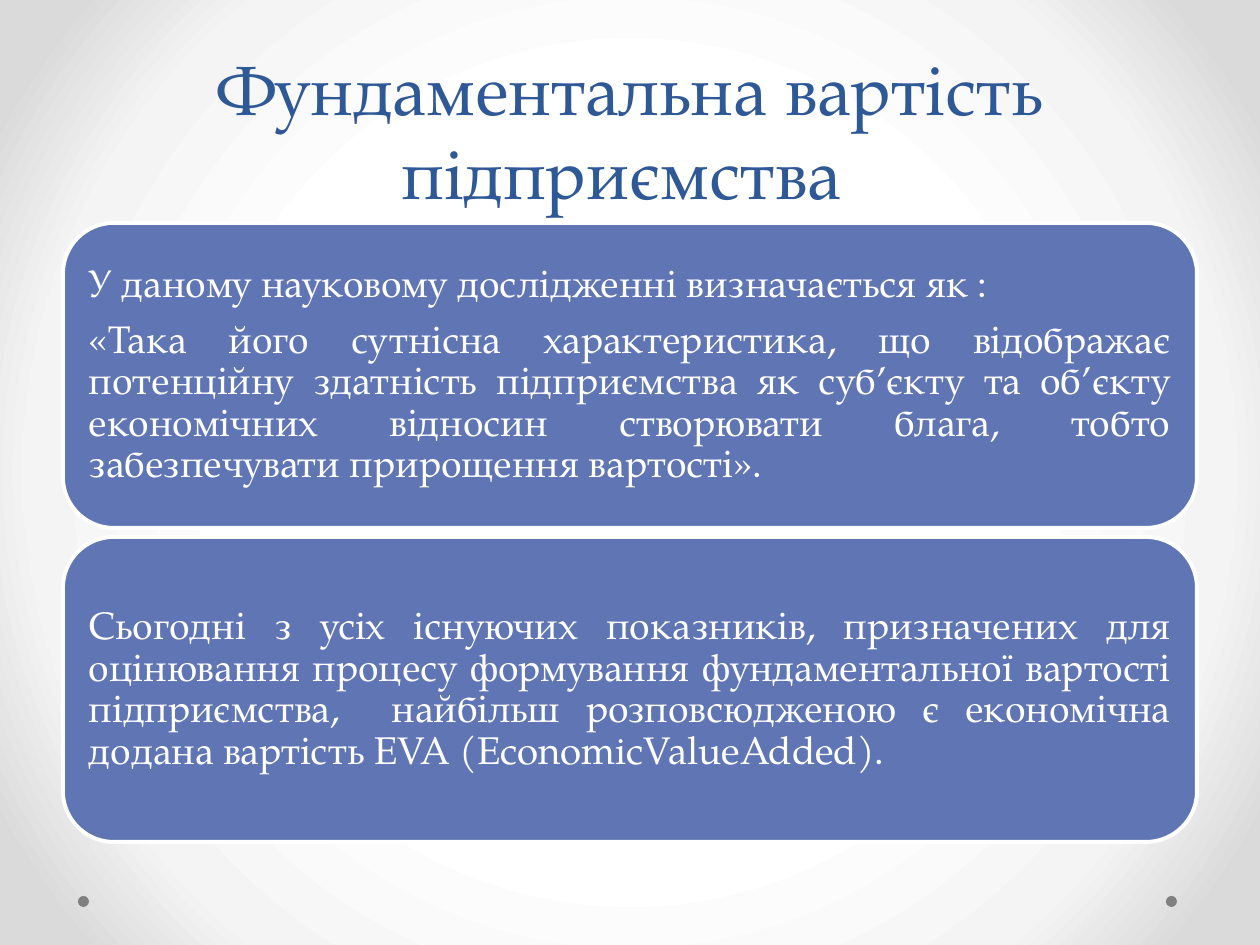
from lxml.etree import SubElement
from pptx import Presentation
from pptx.dml.color import RGBColor
from pptx.enum.shapes import MSO_SHAPE
from pptx.enum.text import MSO_ANCHOR, PP_ALIGN
from pptx.oxml.ns import qn
from pptx.util import Pt

PX = 914400 // 126
FONT = "TeX Gyre Pagella"
WHITE = RGBColor(0xFF, 0xFF, 0xFF)
TITLE_BLUE = RGBColor(0x2F, 0x58, 0x97)
PANEL_BLUE = RGBColor(0x60, 0x76, 0xB4)
DOT_GRAY = RGBColor(0x80, 0x80, 0x80)
GRADIENT = [
    (50, WHITE),
    (76, RGBColor(0xF4, 0xF4, 0xF4)),
    (92, RGBColor(0xDA, 0xDA, 0xDA)),
]

TITLE = "Фундаментальна вартість підприємства "
PANELS = [
    [
        "У даному науковому дослідженні визначається як :",
        "«Така його сутнісна характеристика, що відображає потенційну "
        "здатність підприємства як суб’єкту та об’єкту економічних відносин "
        "створювати блага, тобто забезпечувати прирощення вартості».",
    ],
    [
        "Сьогодні з усіх існуючих показників, призначених для оцінювання "
        "процесу формування фундаментальної вартості підприємства,  найбільш "
        "розповсюдженою є економічна додана вартість EVA (EconomicValueAdded). ",
    ],
]
PANEL_LEFT, PANEL_TOP, PANEL_WIDTH, PANEL_HEIGHT = 63, 223, 1134, 305
PANEL_STEP = 314


def px(*lengths):
    return [length * PX for length in lengths]


def format_runs(paragraph, size, color):
    for run in paragraph.runs:
        run.font.name = FONT
        run.font.size = Pt(size)
        run.font.color.rgb = color


def set_radial_background(slide):
    slide.background.fill.gradient()
    gradient = slide.element.find(".//" + qn("a:gradFill"))
    for child in list(gradient):
        gradient.remove(child)
    stops = SubElement(gradient, qn("a:gsLst"))
    for percent, color in GRADIENT:
        stop = SubElement(stops, qn("a:gs"), pos=str(percent * 1000))
        SubElement(stop, qn("a:srgbClr"), val=str(color))
    circle = SubElement(gradient, qn("a:path"), path="circle")
    SubElement(circle, qn("a:fillToRect"), l="50000", t="50000", r="50000", b="50000")


def add_dot(slide, left):
    dot = slide.shapes.add_shape(MSO_SHAPE.OVAL, *px(left, 896, 11, 11))
    dot.shadow.inherit = False
    dot.fill.solid()
    dot.fill.fore_color.rgb = DOT_GRAY
    dot.line.fill.background()


def set_title(slide):
    title = slide.shapes.title
    title.left, title.top, title.width, title.height = px(63, 0, 1134, 220)
    frame = title.text_frame
    frame.text = TITLE
    frame.word_wrap = True
    frame.vertical_anchor = MSO_ANCHOR.BOTTOM
    heading = frame.paragraphs[0]
    heading.alignment = PP_ALIGN.CENTER
    format_runs(heading, 40, TITLE_BLUE)


def add_panel(slide, top, statements):
    panel = slide.shapes.add_shape(
        MSO_SHAPE.ROUNDED_RECTANGLE, *px(PANEL_LEFT, top, PANEL_WIDTH, PANEL_HEIGHT)
    )
    panel.shadow.inherit = False
    panel.fill.solid()
    panel.fill.fore_color.rgb = PANEL_BLUE
    panel.line.color.rgb = WHITE
    panel.line.width = Pt(2.25)

    frame = panel.text_frame
    frame.word_wrap = True
    frame.vertical_anchor = MSO_ANCHOR.MIDDLE
    frame.margin_left, frame.margin_top, frame.margin_right, frame.margin_bottom = px(
        11, 11, 11, 11
    )
    frame.text = "\n".join(statements)
    for statement in frame.paragraphs:
        statement.alignment = PP_ALIGN.JUSTIFY
        statement.line_spacing = 0.9
        statement.space_after = Pt(7.7)
        format_runs(statement, 22, WHITE)


def main():
    deck = Presentation()
    deck.slide_width, deck.slide_height = px(1260, 945)
    slide = deck.slides.add_slide(deck.slide_layouts[5])

    # Backdrop and corner dots
    set_radial_background(slide)
    for left in (1166, 78):
        add_dot(slide, left)

    # Title and definition panels
    set_title(slide)
    for row, statements in enumerate(PANELS):
        add_panel(slide, PANEL_TOP + row * PANEL_STEP, statements)

    deck.save("out.pptx")


if __name__ == "__main__":
    main()
